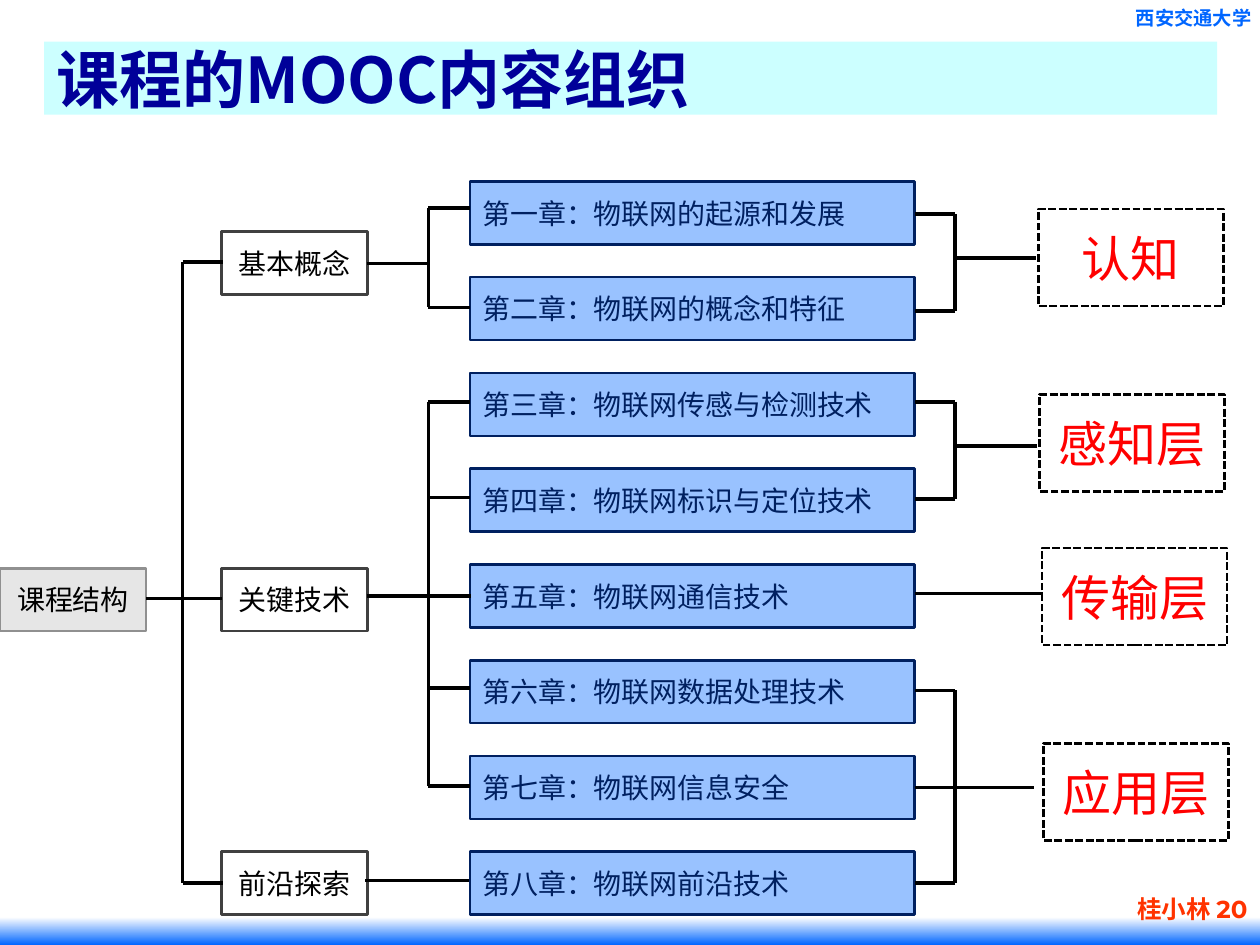
from dataclasses import dataclass

from lxml.etree import SubElement
from pptx import Presentation
from pptx.dml.color import RGBColor
from pptx.enum.dml import MSO_LINE
from pptx.enum.shapes import MSO_CONNECTOR as Connector, MSO_SHAPE as Shape
from pptx.enum.text import MSO_ANCHOR as Anchor, PP_ALIGN as Align
from pptx.oxml.ns import qn
from pptx.util import Inches, Pt


@dataclass(frozen=True)
class Theme:
    """Colours, fonts and type sizes of the slide."""
    white: str = "FFFFFF"
    black: str = "000000"
    blue: str = "0066FF"
    title_fill: str = "CCFFFF"
    title_text: str = "000099"
    root_fill: str = "E6E6E6"
    root_line: str = "909090"
    topic_line: str = "404040"
    chapter_fill: str = "99C2FF"
    navy: str = "002060"
    red: str = "FF0000"
    orange: str = "FF3300"
    body_font: str = "Noto Sans CJK SC"
    header_font: str = "Times New Roman"
    footer_font: str = "Montserrat"
    title_size: int = 36
    layer_size: int = 28
    body_size: int = 16
    footer_size: int = 14
    header_size: int = 11
    border: float = 1.5
    link: float = 2


THEME = Theme()
CHAPTERS = (
    "物联网的起源和发展", "物联网的概念和特征", "物联网传感与检测技术",
    "物联网标识与定位技术", "物联网通信技术", "物联网数据处理技术",
    "物联网信息安全", "物联网前沿技术",
)
TOPICS = (("基本概念", 1.84), ("关键技术", 4.51), ("前沿探索", 6.76))
LAYERS = (("认知", 8.24, 1.66), ("感知层", 8.25, 3.13),
          ("传输层", 8.27, 4.35), ("应用层", 8.28, 5.9))
BRACKETS = (
    (1.45, 1.77, (2.08, 7.01)),
    (3.4, 3.73, (1.65, 2.44)),
    (3.4, 3.73, (3.19, 3.95, 5.46, 6.24)),
    (7.58, 7.26, (1.7, 2.47)),
    (7.58, 7.26, (3.19, 3.96)),
    (7.58, 7.26, (5.48, 6.25, 7.01)),
)
LINKS = (
    (1.16, 1.76, 4.75), (2.91, 3.4, 2.09), (2.91, 3.74, 4.73),
    (2.9, 3.72, 6.99), (7.58, 8.22, 2.05), (7.58, 8.23, 3.54),
    (7.26, 8.28, 4.71), (7.58, 8.21, 6.25),
)


def apply_format(target, values):
    """Set each attribute named in the values."""
    for name, value in values.items():
        setattr(target, name, value)


def write_text(shape, text, size, color, align, font=THEME.body_font, bold=False,
               anchor=Anchor.MIDDLE, wrap=True):
    """Write one formatted paragraph into a shape."""
    apply_format(shape.text_frame, {"word_wrap": wrap, "vertical_anchor": anchor})
    paragraph = shape.text_frame.paragraphs[0]
    paragraph.alignment = align
    run = paragraph.add_run()
    run.text = text
    apply_format(run.font, {"name": font, "size": Pt(size), "bold": bold})
    run.font.color.rgb = RGBColor.from_string(color)
    SubElement(run.font._element, qn("a:ea")).set("typeface", THEME.body_font)


def add_box(slide, bounds, fill=None, line=None, dash=None):
    """Add a rectangle with an optional fill and border."""
    shape = slide.shapes.add_shape(Shape.RECTANGLE, *map(Inches, bounds))
    shape.shadow.inherit = False
    if fill:
        shape.fill.solid()
        shape.fill.fore_color.rgb = RGBColor.from_string(fill)
    else:
        shape.fill.background()
    if line:
        shape.line.color.rgb = RGBColor.from_string(line)
        apply_format(shape.line, {"width": Pt(THEME.border), "dash_style": dash})
    else:
        shape.line.fill.background()
    return shape


def add_line(slide, left, top, right, bottom):
    """Add a plain black connector."""
    connector = slide.shapes.add_connector(
        Connector.STRAIGHT, *map(Inches, (left, top, right, bottom)))
    connector.line.color.rgb = RGBColor.from_string(THEME.black)
    connector.line.width = Pt(THEME.link)
    SubElement(connector._element.spPr, qn("a:effectLst"))


def add_bracket(slide, spine, tip, levels):
    """Add a vertical spine with a branch at each level."""
    add_line(slide, spine, levels[0], spine, levels[-1])
    for level in levels:
        add_line(slide, spine, level, tip, level)


def add_frame(slide):
    """Add the bottom band, header, title and footer."""
    band = add_box(slide, (0, 7.28, 10, 0.22))
    band.fill.gradient()
    band.fill.gradient_angle = 270
    stops = zip(band.fill.gradient_stops, (THEME.white, THEME.blue), (0, 1))
    for stop, color, position in stops:
        stop.color.rgb = RGBColor.from_string(color)
        stop.position = position
    header = slide.shapes.add_textbox(*map(Inches, (8.91, 0, 1.13, 0.29)))
    write_text(header, "西安交通大学", THEME.header_size, THEME.blue, Align.CENTER,
               THEME.header_font, True, Anchor.TOP, False)
    title = add_box(slide, (0.35, 0.33, 9.31, 0.58), THEME.title_fill)
    write_text(title, "课程的MOOC内容组织", THEME.title_size, THEME.title_text,
               Align.LEFT, bold=True)
    footer = slide.shapes.add_textbox(*map(Inches, (7.28, 7.05, 2.72, 0.5)))
    write_text(footer, "桂小林 20", THEME.footer_size, THEME.orange, Align.RIGHT,
               THEME.footer_font, True, Anchor.TOP)


def add_boxes(slide):
    """Add the root, topic, chapter and layer boxes."""
    root = add_box(slide, (0, 4.51, 1.16, 0.5), THEME.root_fill, THEME.root_line)
    write_text(root, "课程结构", THEME.body_size, THEME.black, Align.CENTER)
    for text, top in TOPICS:
        topic = add_box(slide, (1.76, top, 1.16, 0.5), THEME.white, THEME.topic_line)
        write_text(topic, text, THEME.body_size, THEME.black, Align.CENTER)
    for index, (number, name) in enumerate(zip("一二三四五六七八", CHAPTERS)):
        chapter = add_box(slide, (3.73, 1.44 + 0.76 * index, 3.53, 0.5),
                          THEME.chapter_fill, THEME.navy)
        write_text(chapter, f"第{number}章：{name}", THEME.body_size, THEME.navy,
                   Align.JUSTIFY)
    for text, left, top in LAYERS:
        layer = add_box(slide, (left, top, 1.47, 0.77), line=THEME.black,
                        dash=MSO_LINE.SQUARE_DOT)
        write_text(layer, text, THEME.layer_size, THEME.red, Align.CENTER)


def main():
    """Build and save the slide."""
    presentation = Presentation()
    size = {"slide_width": Inches(10), "slide_height": Inches(7.5)}
    apply_format(presentation, size)
    slide = presentation.slides.add_slide(presentation.slide_layouts[6])
    add_frame(slide)
    add_boxes(slide)
    for spine, tip, levels in BRACKETS:
        add_bracket(slide, spine, tip, levels)
    for left, right, level in LINKS:
        add_line(slide, left, level, right, level)
    presentation.save("out.pptx")


if __name__ == "__main__":
    main()
